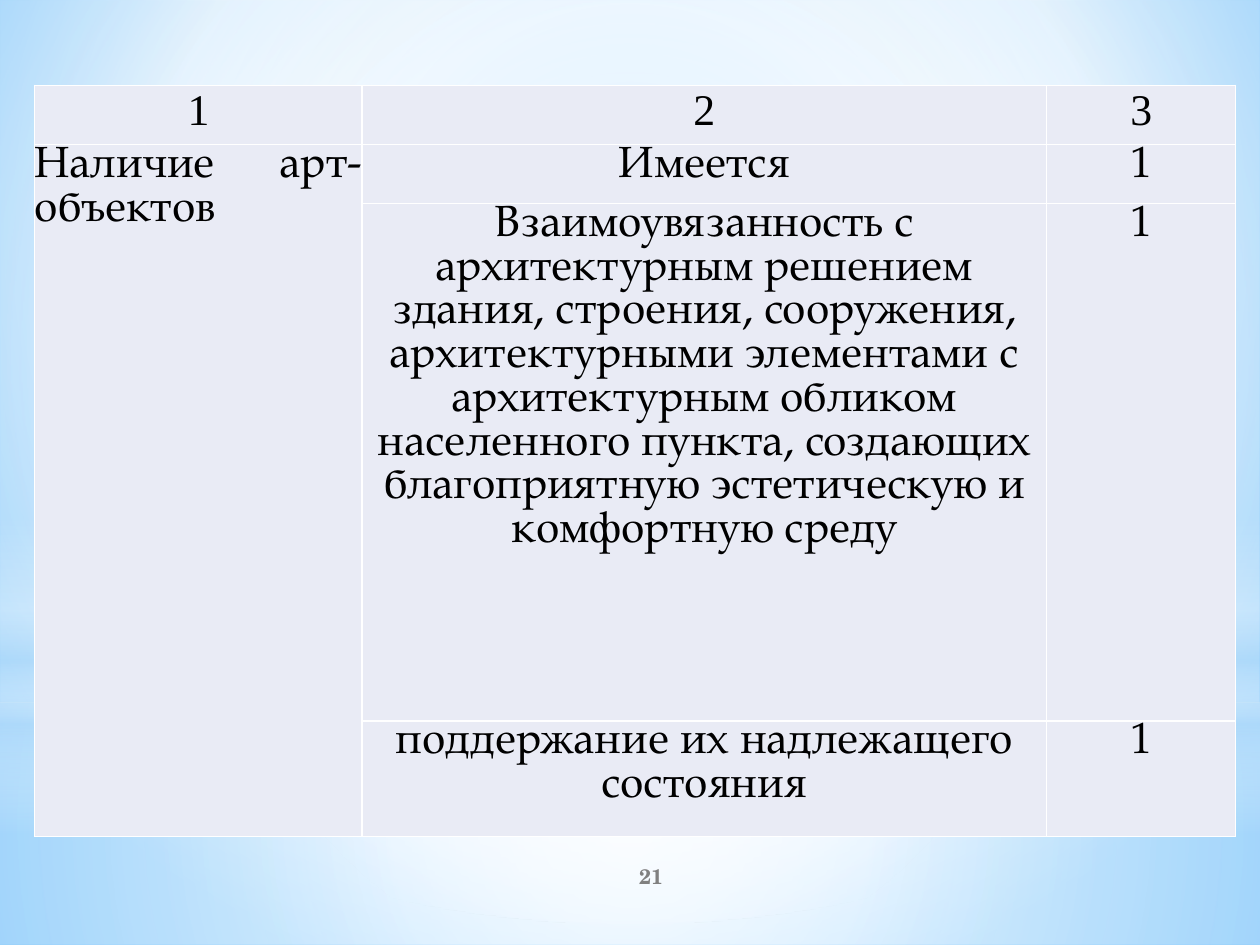
import pptx
import pptx.util
import pptx.dml.color
import pptx.enum.shapes
import pptx.enum.text
import pptx.oxml
import pptx.oxml.ns

Cm, Pt = pptx.util.Cm, pptx.util.Pt
ALIGN = pptx.enum.text.PP_ALIGN
SHAPE = pptx.enum.shapes.MSO_SHAPE
qn = pptx.oxml.ns.qn

SERIF = "TeX Gyre Pagella"
CELL_FORMAT = {"margin_left": 0, "margin_right": 0,
               "margin_top": Cm(0.03), "margin_bottom": Cm(0.03)}
COLUMN_WIDTHS = [6.6, 13.8, 3.81]
ROW_HEIGHTS = [1.19, 1.19, 10.43, 2.33]
CRITERIA = [
    ["1", "2", "3"],
    ["Наличие арт-объектов", "Имеется", "1"],
    ["", "Взаимоувязанность с архитектурным решением здания, строения, "
         "сооружения, архитектурными элементами с архитектурным обликом "
         "населенного пункта, создающих благоприятную эстетическую и "
         "комфортную среду", "1"],
    ["", "поддержание их надлежащего состояния", "1"],
]

SKY_STOPS = [(0, "9ED5FF", 100), (60, "FFFFFF", 100), (100, "5BB9FF", 100)]
CENTRE = (50, 50, 50, 50)
GLOWS = [
    (SHAPE.RECTANGLE, 14.17, 4.88,
     [(0, "FFFFFF", 91), (37, "FFFFFF", 76), (100, "B4DCFA", 79)], CENTRE),
    (SHAPE.RECTANGLE, 0, 14.17,
     [(0, "FFFFFF", 89), (48, "FFFFFF", 62), (100, "B4DCFA", 79)], CENTRE),
    (SHAPE.RECTANGLE, 10.46, 6.35,
     [(0, "FFFFFF", 0), (29, "FFFFFF", 30), (45, "B4DCFA", 40),
      (55, "FFFFFF", 26), (65, "B4DCFA", 60), (100, "FFFFFF", 0)], None),
    (SHAPE.OVAL, 4.45, 14.17,
     [(0, "FFFFFF", 100), (56, "FFFFFF", 0)], CENTRE),
]


def color(hex_code):
    return pptx.dml.color.RGBColor.from_string(hex_code)


def apply_format(target, values):
    for name, value in values.items():
        setattr(target, name, value)


def set_gradient(fill, holder, stops, focus):
    fill.solid()
    stop_xml = "".join(
        f'<a:gs pos="{place * 1000}"><a:srgbClr val="{hex_code}">'
        f'<a:alpha val="{opacity * 1000}"/></a:srgbClr></a:gs>'
        for place, hex_code, opacity in stops)
    if focus:
        sides = " ".join(f'{side}="{share * 1000}"' for side, share in zip("ltrb", focus))
        direction = f'<a:path path="circle"><a:fillToRect {sides}/></a:path>'
    else:
        direction = '<a:lin ang="5400000" scaled="0"/>'
    gradient = pptx.oxml.parse_xml(
        f'<a:gradFill {pptx.oxml.ns.nsdecls("a")} rotWithShape="1">'
        f'<a:gsLst>{stop_xml}</a:gsLst>{direction}</a:gradFill>')
    holder.replace(holder.find(qn("a:solidFill")), gradient)


def add_glow(slide, kind, top, height, stops, focus):
    glow = slide.shapes.add_shape(kind, 0, Cm(top), Cm(25.4), Cm(height))
    glow.shadow.inherit = False
    glow.line.fill.background()
    set_gradient(glow.fill, glow.element.spPr, stops, focus)


def write(frame, text, align, spacing, font_format, hex_code):
    paragraph = frame.paragraphs[0]
    apply_format(paragraph, {"alignment": align, "line_spacing": spacing})
    run = paragraph.add_run()
    run.text = text
    apply_format(run.font, font_format)
    run.font.color.rgb = color(hex_code)


def set_borders(cell, hex_code):
    properties = cell._tc.get_or_add_tcPr()
    for position, side in enumerate(("lnL", "lnR", "lnT", "lnB")):
        properties.insert(position, pptx.oxml.parse_xml(
            f'<a:{side} {pptx.oxml.ns.nsdecls("a")} w="12700"><a:solidFill>'
            f'<a:srgbClr val="{hex_code}"/></a:solidFill></a:{side}>'))


def add_criteria_table(slide):
    table = slide.shapes.add_table(
        len(ROW_HEIGHTS), len(COLUMN_WIDTHS), Cm(0.7), Cm(1.72),
        Cm(sum(COLUMN_WIDTHS)), Cm(sum(ROW_HEIGHTS))).table
    apply_format(table, {"first_row": False, "horz_banding": False})
    for column, width in zip(table.columns, COLUMN_WIDTHS):
        column.width = Cm(width)
    for row, height in zip(table.rows, ROW_HEIGHTS):
        row.height = Cm(height)
    table.cell(1, 0).merge(table.cell(3, 0))
    for row_index, entries in enumerate(CRITERIA):
        font_name = SERIF if row_index else "Times New Roman"
        spacing = Pt(25) if row_index else 1.0
        for column_index, text in enumerate(entries):
            cell = table.cell(row_index, column_index)
            apply_format(cell, CELL_FORMAT)
            cell.fill.solid()
            cell.fill.fore_color.rgb = color("E9EBF5")
            set_borders(cell, "FFFFFF")
            if text:
                align = ALIGN.JUSTIFY if row_index and not column_index else ALIGN.CENTER
                write(cell.text_frame, text, align, spacing,
                      {"name": font_name, "size": Pt(25), "bold": False}, "000000")


def add_page_number(slide, number):
    frame = slide.shapes.add_textbox(Cm(10.59), Cm(17.15), Cm(5.08), Cm(1.02)).text_frame
    apply_format(frame, {"word_wrap": True,
                         "vertical_anchor": pptx.enum.text.MSO_ANCHOR.MIDDLE})
    write(frame, number, ALIGN.CENTER, 1.0,
          {"name": "TeX Gyre Schola", "size": Pt(12), "bold": True}, "808080")


def main():
    deck = pptx.Presentation()
    apply_format(deck, {"slide_width": Cm(25.4), "slide_height": Cm(19.05)})
    slide = deck.slides.add_slide(deck.slide_layouts[6])
    sky = slide.background.fill
    sky.solid()
    set_gradient(sky, slide.element.find(".//" + qn("p:bgPr")),
                 SKY_STOPS, (20, 10, 20, 60))
    for glow in GLOWS:
        add_glow(slide, *glow)
    add_criteria_table(slide)
    add_page_number(slide, "21")
    deck.save("out.pptx")


if __name__ == "__main__":
    main()
